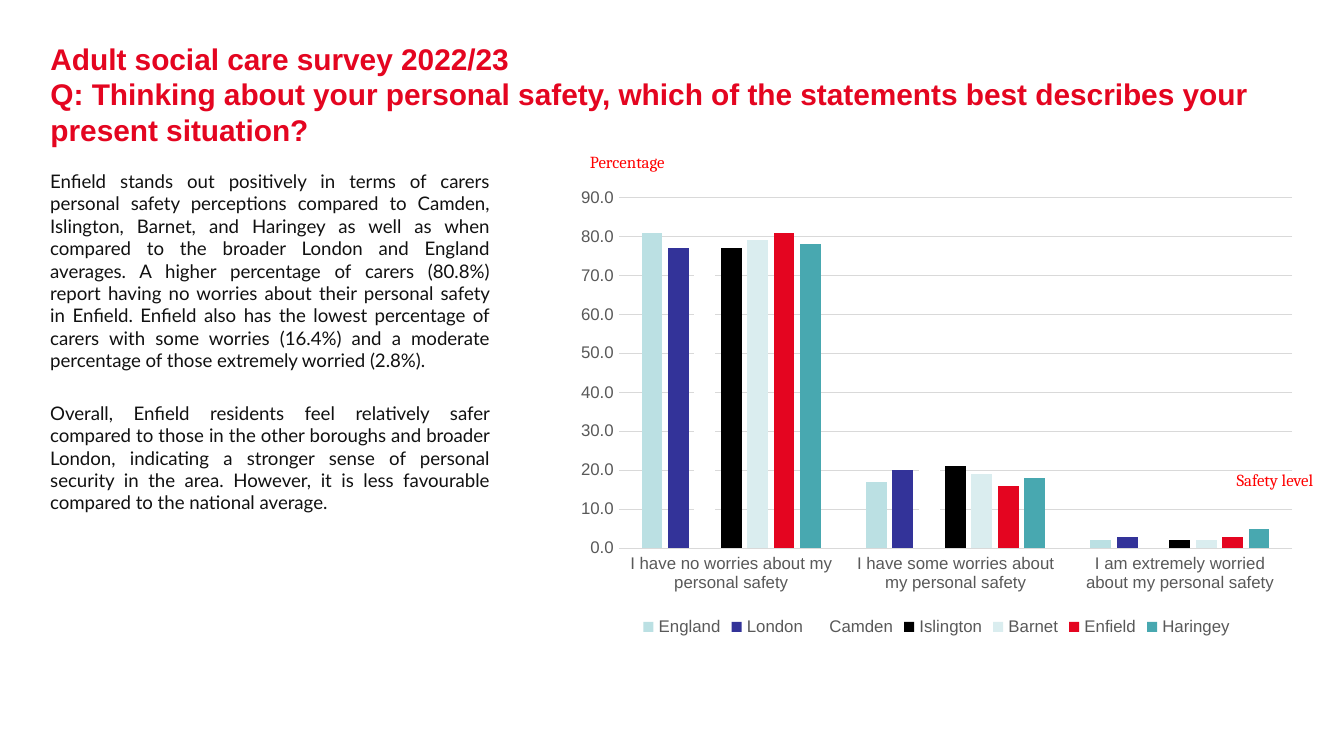
from dataclasses import dataclass

from pptx import Presentation
from pptx import util as u
from pptx.chart.data import CategoryChartData
from pptx.dml.color import RGBColor
from pptx.enum import chart as charts, text


@dataclass(frozen=True)
class Theme:
    heading_font: str = "Arial"
    body_font: str = "Lato"
    label_font: str = "Cambria"
    title_size: int = 16
    body_size: int = 10
    label_size: int = 9
    title_color: str = "E40520"
    body_color: str = "111111"
    label_color: str = "FF0000"
    axis_color: str = "595959"
    grid_color: str = "D9D9D9"


TITLE = ("Adult social care survey 2022/23\v"
         "Q: Thinking about your personal safety, which of the statements "
         "best describes your present situation?")

COMMENTARY = [
    "Enfield stands out positively in terms of carers personal safety perceptions "
    "compared to Camden, Islington, Barnet, and Haringey as well as when compared to "
    "the broader London and England averages. A higher percentage of carers (80.8%) "
    "report having no worries about their personal safety in Enfield. Enfield also has "
    "the lowest percentage of carers with some worries (16.4%) and a moderate "
    "percentage of those extremely worried (2.8%).",
    "Overall, Enfield residents feel relatively safer compared to those in the other "
    "boroughs and broader London, indicating a stronger sense of personal security in "
    "the area. However, it is less favourable compared to the national average.",
]

SAFETY_LEVELS = [
    "I have no worries about my personal safety",
    "I have some worries about my personal safety",
    "I am extremely worried about my personal safety",
]

# Area, percentage per safety level, bar colour
AREAS = [
    ("England", (81, 17, 2), "BBE0E3"),
    ("London", (77, 20, 3), "333399"),
    ("Camden", (74, 22, 5), "FFFFFF"),
    ("Islington", (77, 21, 2), "000000"),
    ("Barnet", (79, 19, 2), "DAEDEF"),
    ("Enfield", (81, 16, 3), "E40520"),
    ("Haringey", (78, 18, 5), "48A8B0"),
]


class SlideBuilder:
    def __init__(self, slide, theme):
        self.slide = slide
        self.theme = theme

    def style(self, font, name, size, color, bold=False):
        font.name = name
        font.size = u.Pt(size)
        font.bold = bold
        font.color.rgb = RGBColor.from_string(color)

    def title(self, wording, left, top, width, height):
        shape = self.slide.shapes.title
        shape.left, shape.top = u.Cm(left), u.Cm(top)
        shape.width, shape.height = u.Cm(width), u.Cm(height)
        frame = shape.text_frame
        frame.text = wording
        frame.word_wrap = True
        frame.auto_size = text.MSO_AUTO_SIZE.NONE
        frame.vertical_anchor = text.MSO_ANCHOR.MIDDLE
        paragraph = frame.paragraphs[0]
        paragraph.alignment = text.PP_ALIGN.LEFT
        self.style(paragraph.font, self.theme.heading_font, self.theme.title_size,
                   self.theme.title_color, bold=True)

    def text_box(self, left, top, width, height):
        shape = self.slide.shapes.add_textbox(
            u.Cm(left), u.Cm(top), u.Cm(width), u.Cm(height))
        shape.text_frame.word_wrap = True
        return shape.text_frame

    def commentary(self, paragraphs, left, top, width, height):
        frame = self.text_box(left, top, width, height)
        frame.text = "\n".join(paragraphs)
        for index, paragraph in enumerate(frame.paragraphs):
            paragraph.alignment = text.PP_ALIGN.JUSTIFY
            paragraph.space_before = u.Pt(16 if index else 0)
            self.style(paragraph.font, self.theme.body_font, self.theme.body_size,
                       self.theme.body_color)

    def axis_label(self, wording, left, top, width, height):
        frame = self.text_box(left, top, width, height)
        frame.text = wording
        self.style(frame.paragraphs[0].font, self.theme.label_font,
                   self.theme.label_size, self.theme.label_color)

    def column_chart(self, categories, areas, left, top, width, height):
        data = CategoryChartData(number_format="0.0")
        data.categories = categories
        for name, values, _ in areas:
            data.add_series(name, values)
        chart = self.slide.shapes.add_chart(
            charts.XL_CHART_TYPE.COLUMN_CLUSTERED,
            u.Cm(left), u.Cm(top), u.Cm(width), u.Cm(height), data).chart
        chart.has_title = False
        chart_style = (self.theme.heading_font, self.theme.label_size,
                       self.theme.axis_color)
        self.style(chart.font, *chart_style)

        # Bars
        plot = chart.plots[0]
        plot.gap_width, plot.overlap = 219, -27
        plot.vary_by_categories = False
        for series, (_, _, color) in zip(plot.series, areas):
            series.format.fill.solid()
            series.format.fill.fore_color.rgb = RGBColor.from_string(color)
            series.invert_if_negative = False

        # Axes and gridlines
        value_axis, category_axis = chart.value_axis, chart.category_axis
        for axis in (value_axis, category_axis):
            axis.major_tick_mark = charts.XL_TICK_MARK.NONE
            axis.minor_tick_mark = charts.XL_TICK_MARK.NONE
            self.style(axis.tick_labels.font, *chart_style)
        value_axis.minimum_scale, value_axis.maximum_scale = 0, 90
        value_axis.major_unit = 10
        value_axis.tick_labels.number_format = "0.0"
        value_axis.tick_labels.number_format_is_linked = False
        value_axis.format.line.fill.background()
        for line in (value_axis.major_gridlines.format.line, category_axis.format.line):
            line.color.rgb = RGBColor.from_string(self.theme.grid_color)
            line.width = u.Pt(0.75)

        # Legend
        chart.has_legend = True
        chart.legend.position = charts.XL_LEGEND_POSITION.BOTTOM
        chart.legend.include_in_layout = False
        self.style(chart.legend.font, *chart_style)


def main():
    presentation = Presentation()
    presentation.slide_width, presentation.slide_height = u.Cm(25.4), u.Cm(14.28)
    slide = presentation.slides.add_slide(presentation.slide_layouts[5])
    builder = SlideBuilder(slide, Theme())

    # Heading and commentary
    builder.title(TITLE, 0.7, 0.58, 24, 2.39)
    builder.commentary(COMMENTARY, 0.7, 3.08, 8.8, 9.88)

    # Chart with its axis labels
    builder.axis_label("Percentage", 10.9, 2.75, 2.29, 0.63)
    builder.column_chart(SAFETY_LEVELS, AREAS, 10.7, 3.37, 14, 8.76)
    builder.axis_label("Safety level", 23.12, 8.74, 2.29, 0.63)

    presentation.save("out.pptx")


if __name__ == "__main__":
    main()
